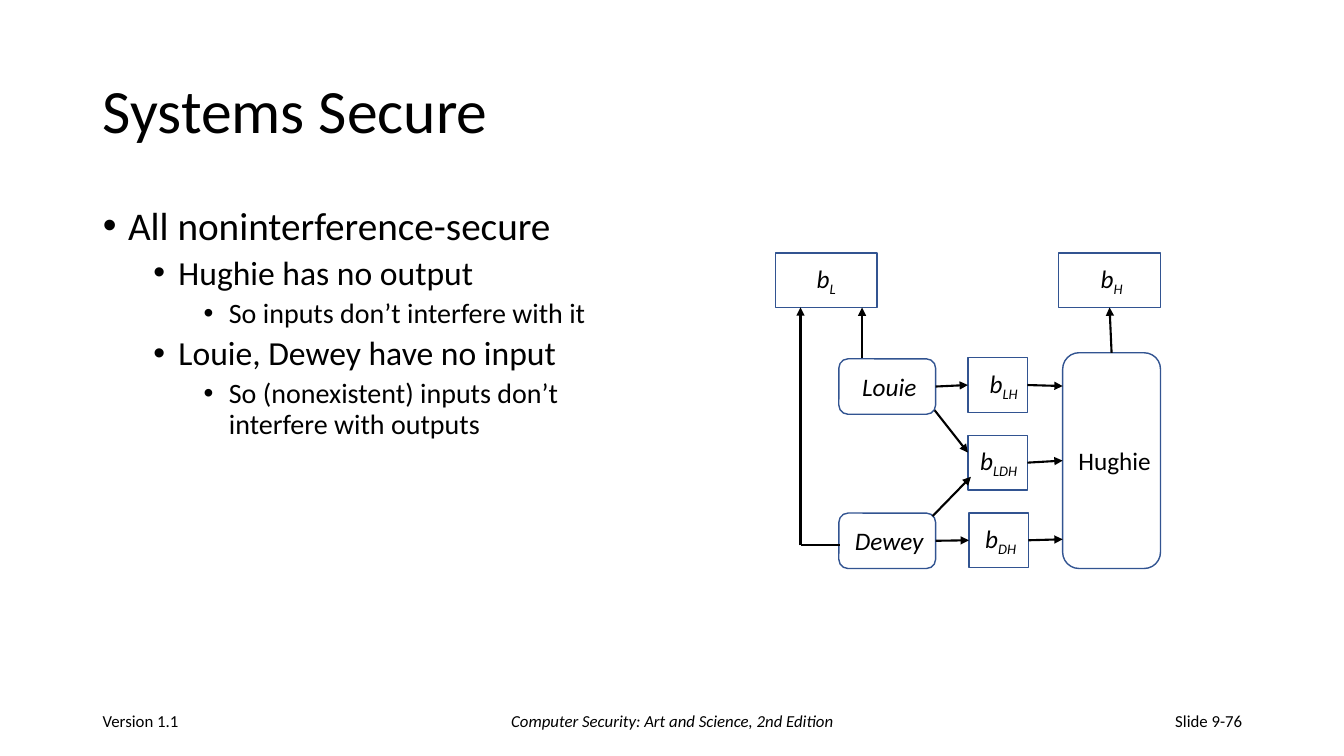
from lxml import etree
from pptx import Presentation
from pptx import util as u
from pptx.dml.color import RGBColor
from pptx.enum import shapes, text
from pptx.oxml.ns import qn

PX = 9144
FONT = "Calibri"
HEX = {"ink": "000000", "edge": "325491"}
LEFT, MID, RIGHT = text.PP_ALIGN.LEFT, text.PP_ALIGN.CENTER, text.PP_ALIGN.RIGHT
RECT, ROUND = shapes.MSO_SHAPE.RECTANGLE, shapes.MSO_SHAPE.ROUNDED_RECTANGLE
TOP, WEST, BASE, EAST = range(4)

TITLE = "Systems Secure"
LIST = [
    (0, "All noninterference-secure"),
    (1, "Hughie has no output"),
    (2, "So inputs don’t interfere with it"),
    (1, "Louie, Dewey have no input"),
    (2, "So (nonexistent) inputs don’t interfere with outputs"),
]
SIZES = [28, 24, 20]
FOOT = [
    (92, 300, "Version 1.1", LEFT, False),
    (442, 450, "Computer Security: Art and Science, 2nd Edition", MID, True),
    (942, 300, "Slide 9-76", RIGHT, False),
]
# name: shape, box, label, subscript, italic, label shift
NODES = {
    "bL": (RECT, (769, 251, 101, 54), "b", "L", True, 0),
    "bH": (RECT, (1050, 251, 101, 54), "b", "H", True, 2),
    "Louie": (ROUND, (832, 356, 96, 55), "Louie", "", True, 2),
    "Dewey": (ROUND, (832, 509, 96, 55), "Dewey", "", True, 2),
    "bLH": (RECT, (960, 355, 59, 54), "b", "LH", True, 6),
    "bLDH": (RECT, (960, 432, 59, 54), "b", "LDH", True, 1),
    "bDH": (RECT, (961, 509, 59, 54), "b", "DH", True, 2),
    "Hughie": (ROUND, (1054, 350, 97, 214), "Hughie", "", False, 3),
}
# each end is a point or a (node, side) pair
LINKS = [
    ((833, 541), (794, 541), False),
    ((794, 541), (794, 305), True),
    ((855, 355), (855, 305), True),
    (("Louie", EAST), ("bLH", WEST), True),
    (("Dewey", EAST), ("bDH", WEST), True),
    ((925, 512), (963, 473), True),
    ((927, 407), (960, 449), True),
    (("bLH", EAST), (1054, 383), True),
    (("bLDH", EAST), ("Hughie", WEST), True),
    (("bDH", EAST), (1054, 535), True),
    (("Hughie", TOP), ("bH", BASE), True),
]


def emu(*vals):
    return [v * PX for v in vals]


def color(key):
    return RGBColor.from_string(HEX[key])


def style(font, size, slant=False):
    font.name, font.size, font.italic = FONT, u.Pt(size), slant
    font.color.rgb = color("ink")


def place(shape, *box):
    shape.left, shape.top, shape.width, shape.height = emu(*box)


def fill_list(frame):
    frame.auto_size = text.MSO_AUTO_SIZE.NONE
    for i, (level, line) in enumerate(LIST):
        para = frame.paragraphs[0] if i == 0 else frame.add_paragraph()
        para.text, para.level = line, level
        para.line_spacing = 0.9
        para.space_before = u.Pt(5 if i else 0)
        props = para._p.get_or_add_pPr()
        props.set("marL", str((25 + 50 * level) * PX))
        props.set("indent", str(-25 * PX))
        etree.SubElement(props, qn("a:buFont")).set("typeface", "Arial")
        etree.SubElement(props, qn("a:buChar")).set("char", "•")
        style(para.font, SIZES[level])


def add_node(slide, kind, box, label, sub, slant, shift):
    node = slide.shapes.add_shape(kind, *emu(*box))
    node.shadow.inherit = False
    node.fill.background()
    node.line.color.rgb, node.line.width = color("edge"), u.Pt(1)
    frame = node.text_frame
    frame.margin_left, frame.margin_right = 2 * shift * PX, 0
    frame.vertical_anchor = text.MSO_ANCHOR.MIDDLE
    para = frame.paragraphs[0]
    para.alignment = MID
    para.add_run().text = label
    if sub:
        run = para.add_run()
        run.text = sub
        run._r.get_or_add_rPr().set("baseline", "-25000")
    style(para.font, 18, slant)
    return node


def add_link(slide, nodes, start, end, arrow):
    pts = [(0, 0) if p[0] in nodes else p for p in (start, end)]
    line = slide.shapes.add_connector(
        shapes.MSO_CONNECTOR.STRAIGHT, *emu(*pts[0], *pts[1]))
    for spot, join in ((start, line.begin_connect), (end, line.end_connect)):
        if spot[0] in nodes:
            join(nodes[spot[0]], spot[1])
    line.line.color.rgb, line.line.width = color("ink"), u.Pt(1.5)
    if arrow:
        etree.SubElement(line.line._get_or_add_ln(), qn("a:tailEnd")).set("type", "triangle")
    etree.SubElement(line._element.spPr, qn("a:effectLst"))


def main():
    prs = Presentation()
    prs.slide_width, prs.slide_height = emu(1333, 750)
    slide = prs.slides.add_slide(prs.slide_layouts[1])

    title, body = slide.placeholders
    place(title, 92, 40, 1150, 145)
    title.text_frame.text = TITLE
    title.text_frame.vertical_anchor = text.MSO_ANCHOR.MIDDLE
    head = title.text_frame.paragraphs[0]
    head.alignment, head.line_spacing = LEFT, 0.9
    style(head.font, 44)

    place(body, 92, 200, 567, 476)
    fill_list(body.text_frame)

    for left, width, words, align, slant in FOOT:
        frame = slide.shapes.add_textbox(*emu(left, 695, width, 40)).text_frame
        frame.word_wrap = True
        frame.vertical_anchor = text.MSO_ANCHOR.MIDDLE
        para = frame.paragraphs[0]
        para.text, para.alignment = words, align
        style(para.font, 12, slant)

    nodes = {name: add_node(slide, *row) for name, row in NODES.items()}
    for link in LINKS:
        add_link(slide, nodes, *link)
    prs.save("out.pptx")


if __name__ == "__main__":
    main()
